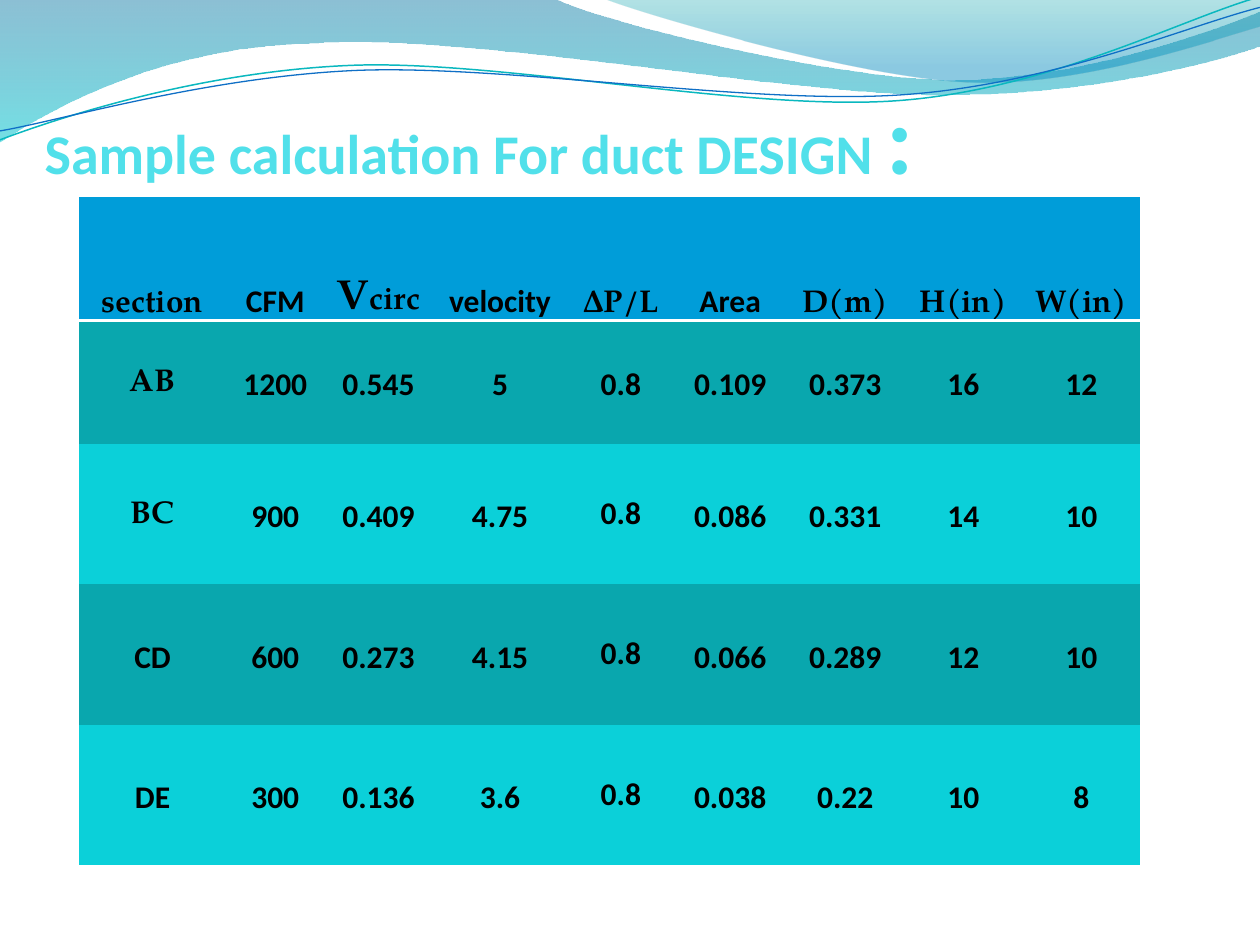
"""Build the duct design sample calculation slide."""
from dataclasses import dataclass
from typing import Optional

import lxml.etree
import pptx
import pptx.dml.color
import pptx.enum.text
import pptx.oxml.ns
import pptx.util

Cm = pptx.util.Cm
Pt = pptx.util.Pt
RGBColor = pptx.dml.color.RGBColor
ALIGN = pptx.enum.text.PP_ALIGN
ANCHOR = pptx.enum.text.MSO_ANCHOR
qn = pptx.oxml.ns.qn

SANS, SERIF = "Calibri", "TeX Gyre Pagella"
BLACK = RGBColor(0x00, 0x00, 0x00)
WHITE = RGBColor(0xFF, 0xFF, 0xFF)
TITLE = RGBColor(0x51, 0xE0, 0xEA)
HEADER = RGBColor(0x00, 0x9D, 0xD9)
BANDS = (RGBColor(0x09, 0xA7, 0xAE), RGBColor(0x0B, 0xD0, 0xD9))
DEEP_BLUE = RGBColor(0x00, 0x74, 0xA1)
AQUA = RGBColor(0x00, 0xC6, 0xCF)
TEAL = RGBColor(0x00, 0xA1, 0xA9)
SKY = RGBColor(0x00, 0x8B, 0xBF)
TEAL_LINE = RGBColor(0x0A, 0xB8, 0xBF)
BLUE_LINE = RGBColor(0x0F, 0x6F, 0xC6)
NO_STYLE = "{2D5ABB26-0587-4C30-8999-92F81FD0307C}"

HEADINGS = ("section", "CFM", "Vcirc", "velocity", "∆P/L", "Area", "D(m)", "H(in)", "W(in)")
ROWS = (
    ("AB", "1200", "0.545", "5", "0.8", "0.109", "0.373", "16", "12"),
    ("BC", "900", "0.409", "4.75", "0.8", "0.086", "0.331", "14", "10"),
    ("CD", "600", "0.273", "4.15", "0.8", "0.066", "0.289", "12", "10"),
    ("DE", "300", "0.136", "3.6", "0.8", "0.038", "0.22", "10", "8"),
)
SANS_HEADINGS = {"CFM", "velocity", "Area"}
SERIF_SECTIONS = {"AB", "BC"}
WIDTHS = (2.97, 1.98, 2.18, 2.72, 2.15, 2.26, 2.38, 2.38, 2.38)
HEIGHTS = (2.49, 2.49, 2.83, 2.83, 2.83)


@dataclass
class Stop:
    """A gradient stop with its opacity in percent."""
    position: float
    color: RGBColor
    opacity: int


@dataclass
class Wave:
    """A path in centimetres: two numbers are a line, six a Bezier curve."""
    start: tuple
    segments: tuple
    stops: tuple = ()
    line: Optional[RGBColor] = None
    width: float = 0


WAVES = (
    Wave((0, 0), (
        (11.18, -0.03),
        (12.09, 0.43, 16.87, 1.6, 19.25, 1.6),
        (21.67, 1.6, 24.33, 0.66, 25.4, 0.23),
        (25.43, 0.91),
        (24.97, 1.12, 22.1, 1.93, 18.95, 1.91),
        (15.8, 1.91, 9.7, 0.71, 6.53, 0.86),
        (3.28, 0.91, 1.17, 2.11, -0.03, 2.87),
    ), stops=(Stop(0, DEEP_BLUE, 45), Stop(1, AQUA, 55))),
    Wave((12.17, -0.03), (
        (12.93, 0.28, 17.32, 1.57, 19.53, 1.65),
        (21.74, 1.75, 24.41, 0.81, 25.4, 0.53),
        (25.4, 0),
    ), stops=(Stop(0, TEAL, 30), Stop(0.8, SKY, 45))),
    Wave((0, 2.82), (
        (1.22, 2.36, 4.01, 1.45, 7.04, 1.32),
        (10.03, 1.19, 15.06, 2.26, 18.11, 2.03),
        (21.16, 1.8, 23.83, 0.38, 25.35, -0.05),
    ), line=TEAL_LINE, width=0.85),
    Wave((0, 2.64), (
        (1.19, 2.44, 4.17, 1.55, 7.19, 1.42),
        (10.24, 1.3, 15.16, 2.13, 18.21, 1.91),
        (21.23, 1.7, 23.9, 0.53, 25.4, 0.15),
    ), line=BLUE_LINE, width=0.75),
)


def bend(sp, segments: tuple) -> None:
    """Turn the straight segments of a freeform into its Bezier curves."""
    for ln, seg in zip(list(sp._element.iter(qn("a:lnTo"))), segments):
        if len(seg) == 2:
            continue
        curve = lxml.etree.Element(qn("a:cubicBezTo"))
        for x, y in zip(seg[::2], seg[1::2]):
            lxml.etree.SubElement(curve, qn("a:pt"), x=str(Cm(x) - sp.left), y=str(Cm(y) - sp.top))
        ln.getparent().replace(ln, curve)


def add_wave(s, wave: Wave) -> None:
    """Draw a filled or outlined wave."""
    builder = s.shapes.build_freeform(Cm(wave.start[0]), Cm(wave.start[1]))
    ends = [(Cm(seg[-2]), Cm(seg[-1])) for seg in wave.segments]
    builder.add_line_segments(ends, close=bool(wave.stops))
    sp = builder.convert_to_shape()
    bend(sp, wave.segments)
    sp.shadow.inherit = False
    if wave.line is not None:
        sp.fill.background()
        sp.line.color.rgb = wave.line
        sp.line.width = Pt(wave.width)
        return
    sp.line.fill.background()
    sp.fill.gradient()
    sp.fill.gradient_angle = 270
    for target, stop in zip(sp.fill.gradient_stops, wave.stops):
        target.position = stop.position
        target.color.rgb = stop.color
    for clr, stop in zip(sp._element.spPr.iter(qn("a:srgbClr")), wave.stops):
        lxml.etree.SubElement(clr, qn("a:alpha")).set("val", str(stop.opacity * 1000))


def add_run(p, text: str, *, size: float = 18, font: str = SANS, color: RGBColor = BLACK) -> None:
    """Append a bold run in the given format."""
    r = p.add_run()
    r.text = text
    r.font.size = Pt(size)
    r.font.name = font
    r.font.bold = True
    r.font.color.rgb = color


def add_title(s) -> None:
    """Add the slide title."""
    tf = s.shapes.add_textbox(Cm(0.9), Cm(0.52), Cm(23.5), Cm(3.4)).text_frame
    tf.word_wrap = True
    tf.vertical_anchor = ANCHOR.BOTTOM
    tf.margin_left = tf.margin_top = tf.margin_bottom = 0
    tf.margin_right = Cm(0.05)
    add_run(tf.paragraphs[0], "Sample calculation For duct DESIGN ", size=32, color=TITLE)
    add_run(tf.paragraphs[0], ":", size=56, color=TITLE)


def format_cell(cell, fill: RGBColor, anchor):
    """Prepare a cell and return its paragraph."""
    cell.fill.solid()
    cell.fill.fore_color.rgb = fill
    cell.vertical_anchor = anchor
    cell.margin_left = cell.margin_right = Cm(0.18)
    cell.margin_top = cell.margin_bottom = 0
    p = cell.text_frame.paragraphs[0]
    p.alignment = ALIGN.CENTER
    p.line_spacing = 1.15
    return p


def underline_cell(cell, color: RGBColor, width: float) -> None:
    """Give a cell a bottom border."""
    ln = lxml.etree.Element(qn("a:lnB"), w=str(Pt(width)))
    fill = lxml.etree.SubElement(ln, qn("a:solidFill"))
    lxml.etree.SubElement(fill, qn("a:srgbClr")).set("val", str(color))
    cell._tc.get_or_add_tcPr().insert(0, ln)


def add_duct_table(s) -> None:
    """Add the table of duct sections."""
    frame = s.shapes.add_table(len(HEIGHTS), len(WIDTHS), Cm(1.59), Cm(3.97),
                               Cm(sum(WIDTHS)), Cm(sum(HEIGHTS)))
    table = frame.table
    table.horz_banding = False
    table._tbl.tblPr.find(qn("a:tableStyleId")).text = NO_STYLE
    for col, width in zip(table.columns, WIDTHS):
        col.width = Cm(width)
    for row, height in zip(table.rows, HEIGHTS):
        row.height = Cm(height)
    for j, text in enumerate(HEADINGS):
        cell = table.cell(0, j)
        p = format_cell(cell, HEADER, ANCHOR.BOTTOM)
        underline_cell(cell, WHITE, 2)
        if text == "Vcirc":
            add_run(p, text[0], size=24, font=SERIF)
            text = text[1:]
        add_run(p, text, font=SANS if text in SANS_HEADINGS else SERIF)
    for i, values in enumerate(ROWS):
        for j, text in enumerate(values):
            cell = table.cell(i + 1, j)
            p = format_cell(cell, BANDS[i % 2], ANCHOR.MIDDLE)
            if i and HEADINGS[j] == "∆P/L":
                cell.margin_bottom = Cm(0.14)
            add_run(p, text, font=SERIF if text in SERIF_SECTIONS else SANS)


def main() -> None:
    """Build and save the slide."""
    prs = pptx.Presentation()
    prs.slide_width, prs.slide_height = Cm(25.4), Cm(19.05)
    s = prs.slides.add_slide(prs.slide_layouts[6])
    for wave in WAVES:
        add_wave(s, wave)
    add_title(s)
    add_duct_table(s)
    prs.save("out.pptx")


if __name__ == "__main__":
    main()
